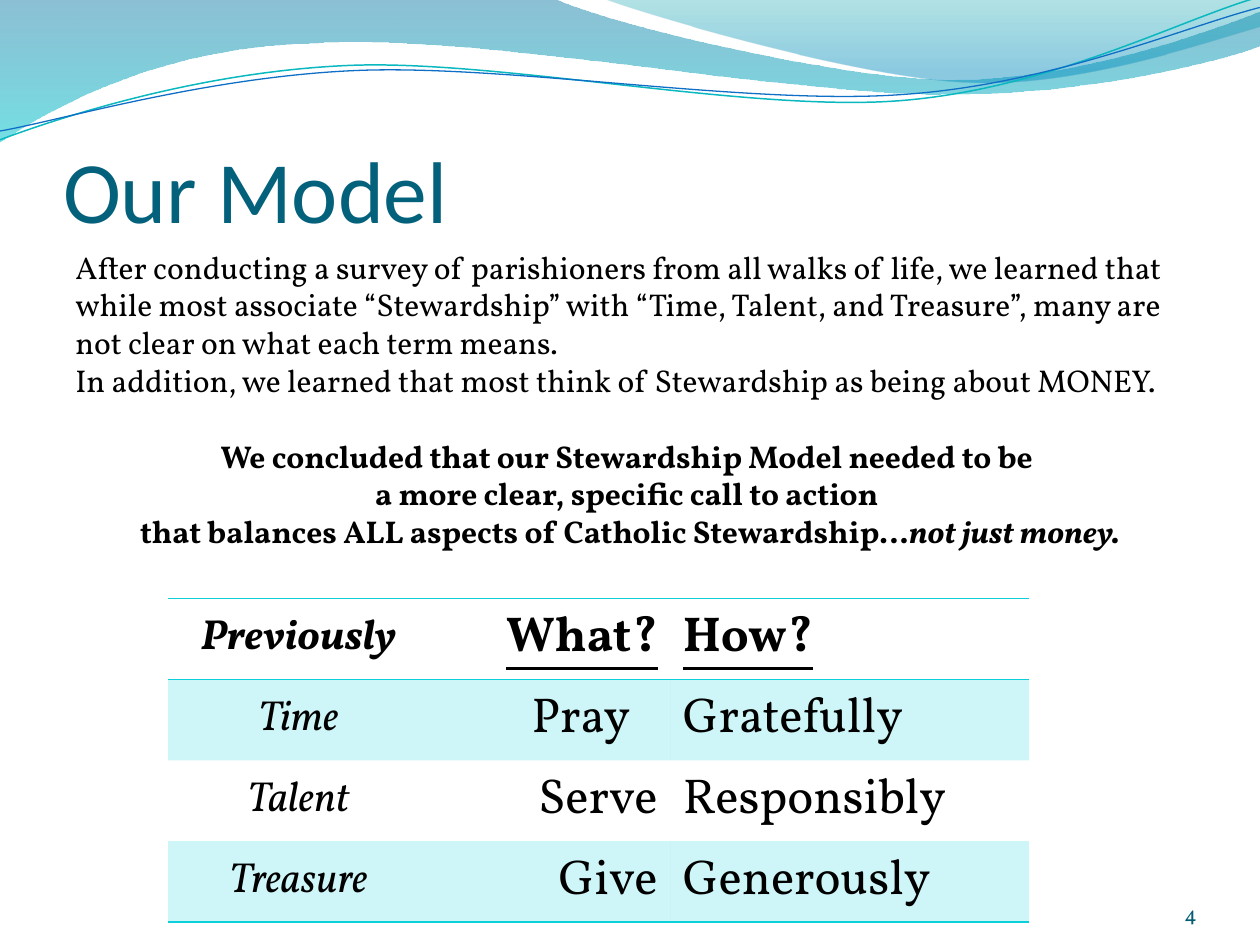
import math

from lxml import etree
from pptx import Presentation
from pptx import util as u
from pptx.dml import color
from pptx.enum import text
from pptx.oxml import ns

Pt = u.Pt
SERIF = "Vollkorn"
COLOURS = {
    "title": "04617B", "number": "045D75", "text": "000000",
    "accent": "0BD0D9", "teal line": "0AB8BF", "blue line": "0F6FC6",
    "sea": "0074A1", "aqua": "00C6CF", "lagoon": "00A1A9", "sky": "008BBF",
}
NO_STYLE = "{2D5ABB26-0587-4C30-8999-92F81FD0307C}"
LEFT, CENTER, RIGHT = text.PP_ALIGN.LEFT, text.PP_ALIGN.CENTER, text.PP_ALIGN.RIGHT
TILT = 357.3

# Outlines in points: a pair is a line's end, six numbers are a Bézier curve.
BROAD_WAVE = [
    (0, 0), (316.8, -0.7), (342.7, 12.2, 478.1, 45.4, 545.8, 45.4),
    (614.2, 45.4, 689.8, 18.7, 720, 6.5), (720.7, 25.9),
    (707.8, 31.7, 626.4, 54.7, 537.1, 54), (447.8, 54, 275, 20.2, 185, 24.5),
    (92.9, 25.9, 33.1, 59.8, -0.7, 81.4), (0, 0)]
RIGHT_WAVE = [
    (344.9, -0.7), (366.5, 7.9, 491, 44.6, 553.7, 46.8),
    (616.3, 49.7, 691.9, 23, 720, 15.1), (720, 0), (344.9, -0.7)]
TEAL_LINE = [
    (0, 79.9), (34.6, 67, 113.8, 41, 199.4, 37.4),
    (284.4, 33.8, 427, 64.1, 513.4, 57.6), (599.8, 51.1, 675.4, 10.8, 718.6, -1.4)]
BLUE_LINE = [
    (0, 74.9), (33.8, 69.1, 118.1, 43.9, 203.8, 40.3),
    (290.2, 36.7, 429.8, 60.5, 516.2, 54), (601.9, 48.2, 677.5, 15.1, 720, 4.3)]


def rgb(name):
    return color.RGBColor.from_string(COLOURS[name])


def set_opacity(fill_element, percents):
    """Give each colour inside the element its opacity, in order."""
    for tint, percent in zip(fill_element.iter(ns.qn("a:srgbClr")), percents):
        etree.SubElement(tint, ns.qn("a:alpha"), val=str(percent * 1000))


def level(outline, degrees):
    """Turn the outline clockwise about the middle of its two ends."""
    (x1, y1), (x2, y2) = outline[0], outline[-1][-2:]
    cx, cy = (x1 + x2) / 2, (y1 + y2) / 2
    cos, sin = math.cos(math.radians(degrees)), math.sin(math.radians(degrees))
    turned = []
    for segment in outline:
        numbers = []
        for x, y in zip(segment[::2], segment[1::2]):
            numbers += [cx + (x - cx) * cos - (y - cy) * sin,
                        cy + (x - cx) * sin + (y - cy) * cos]
        turned.append(tuple(numbers))
    return turned


def add_outline(page, outline, close):
    nodes = [(x * 100, y * 100) for segment in outline
             for x, y in zip(segment[::2], segment[1::2])]
    builder = page.shapes.build_freeform(*nodes[0], scale=Pt(1) / 100)
    builder.add_line_segments(nodes[1:], close=close)
    shape = builder.convert_to_shape()
    shape.shadow.inherit = False
    lines = iter(list(shape.element.iter(ns.qn("a:lnTo"))))
    for segment in outline[1:]:
        line = next(lines)
        if len(segment) == 6:
            line.addprevious(curve := etree.Element(ns.qn("a:cubicBezTo")))
            for part in (line, next(lines), next(lines)):
                curve.append(part[0])
                part.getparent().remove(part)
    return shape


def add_wave(page, outline, stops):
    """Add a filled wave; stops are (position, colour, opacity percent)."""
    wave = add_outline(page, outline, True)
    wave.line.fill.background()
    wave.fill.gradient()
    wave.fill.gradient_angle = 270
    for stop, (position, name, _) in zip(wave.fill.gradient_stops, stops):
        stop.position = position
        stop.color.rgb = rgb(name)
    gradient = wave.element.spPr.find(ns.qn("a:gradFill"))
    set_opacity(gradient, [opacity for _, _, opacity in stops])


def add_wave_line(page, outline, name, width):
    curve = add_outline(page, level(outline, 360 - TILT), False)
    curve.rotation = TILT
    curve.fill.background()
    curve.line.color.rgb = rgb(name)
    curve.line.width = Pt(width)


def format_runs(para, size, name="text", font=SERIF, align=LEFT, **styles):
    para.alignment = align
    for span in para.runs:
        span.font.size = Pt(size)
        span.font.name = font
        span.font.color.rgb = rgb(name)
        for style, value in styles.items():
            setattr(span.font, style, value)


def place_title(page, wording):
    title = page.shapes.title
    title.left, title.top, title.width, title.height = Pt(36), Pt(48), Pt(648), Pt(90)
    frame = title.text_frame
    frame.text = wording
    frame.auto_size = text.MSO_AUTO_SIZE.NONE
    frame.vertical_anchor = text.MSO_ANCHOR.BOTTOM
    frame.margin_left = frame.margin_right = frame.margin_bottom = 0
    format_runs(frame.paragraphs[0], 50, "title", "Calibri")


def add_text_box(page, left, top, width, height):
    frame = page.shapes.add_textbox(Pt(left), Pt(top), Pt(width), Pt(height)).text_frame
    frame.word_wrap = True
    return frame


def add_findings(page):
    frame = add_text_box(page, 36, 138, 648, 181.5)
    findings = [
        "After conducting a survey of parishioners from all walks of life, we learned that "
        "while most associate “Stewardship” with “Time, Talent, and Treasure”, many are "
        "not clear on what each term means.",
        "In addition, we learned that most think of Stewardship as being about MONEY."]
    conclusion = [
        "We concluded that our Stewardship Model needed to be ",
        "a more clear, specific call to action ",
        "that balances ALL aspects of Catholic Stewardship…"]
    frame.text = "\n".join(findings + conclusion)
    paras = frame.paragraphs
    paras[-1].add_run().text = "not just money."
    for para in paras[:2]:
        format_runs(para, 18)
    for para in paras[2:]:
        format_runs(para, 18, align=CENTER, bold=True)
    paras[2].space_before = Pt(21.6)
    paras[-1].runs[-1].font.italic = True


def add_border(cell, side):
    border = etree.SubElement(cell._tc.get_or_add_tcPr(), ns.qn(f"a:{side}"), w=str(Pt(1)))
    fill = etree.SubElement(border, ns.qn("a:solidFill"))
    etree.SubElement(fill, ns.qn("a:srgbClr"), val=COLOURS["accent"])


def shade(cell):
    cell.fill.solid()
    cell.fill.fore_color.rgb = rgb("accent")
    set_opacity(cell._tc.tcPr.find(ns.qn("a:solidFill")), [20])


def add_model_table(page):
    rows = [("Previously", "What?", "How?"), ("Time", "Pray", "Gratefully"),
            ("Talent", "Serve", "Responsibly"), ("Treasure", "Give", "Generously")]
    widths, row_height = (149, 138, 205), 46.25
    frame = page.shapes.add_table(len(rows), len(widths), Pt(96), Pt(342),
                                  Pt(sum(widths)), Pt(row_height * len(rows)))
    table = frame.table
    table.first_row = table.horz_banding = False
    table._tbl.tblPr.find(ns.qn("a:tableStyleId")).text = NO_STYLE
    for column, width in zip(table.columns, widths):
        column.width = Pt(width)
    for r, row in enumerate(rows):
        table.rows[r].height = Pt(row_height)
        for c, wording in enumerate(row):
            cell = table.cell(r, c)
            cell.text = wording
            cell.vertical_anchor = text.MSO_ANCHOR.MIDDLE
            format_runs(cell.text_frame.paragraphs[0], 24 if c == 0 else 28,
                        align=(CENTER, RIGHT, LEFT)[c], bold=r == 0, italic=c == 0,
                        underline=r == 0 and c > 0)
            if r == 0:
                add_border(cell, "lnT")
            if r in (0, len(rows) - 1):
                add_border(cell, "lnB")
            if r % 2:
                shade(cell)
            else:
                cell.fill.background()
    table.cell(1, 1).margin_right = Pt(23)


def add_page_number(page, number):
    frame = add_text_box(page, 624, 500.4, 60, 28.8)
    frame.margin_left = frame.margin_right = frame.margin_top = frame.margin_bottom = 0
    frame.vertical_anchor = text.MSO_ANCHOR.BOTTOM
    frame.text = number
    format_runs(frame.paragraphs[0], 12, "number", align=RIGHT)


def main():
    deck = Presentation()
    deck.slide_width, deck.slide_height = Pt(720), Pt(540)
    page = deck.slides.add_slide(deck.slide_layouts[5])
    add_wave(page, BROAD_WAVE, [(0, "sea", 45), (1, "aqua", 55)])
    add_wave(page, RIGHT_WAVE, [(0, "lagoon", 30), (0.8, "sky", 45)])
    add_wave_line(page, TEAL_LINE, "teal line", 0.85)
    add_wave_line(page, BLUE_LINE, "blue line", 0.75)
    place_title(page, "Our Model")
    add_model_table(page)
    add_findings(page)
    add_page_number(page, "4")
    deck.save("out.pptx")


if __name__ == "__main__":
    main()
